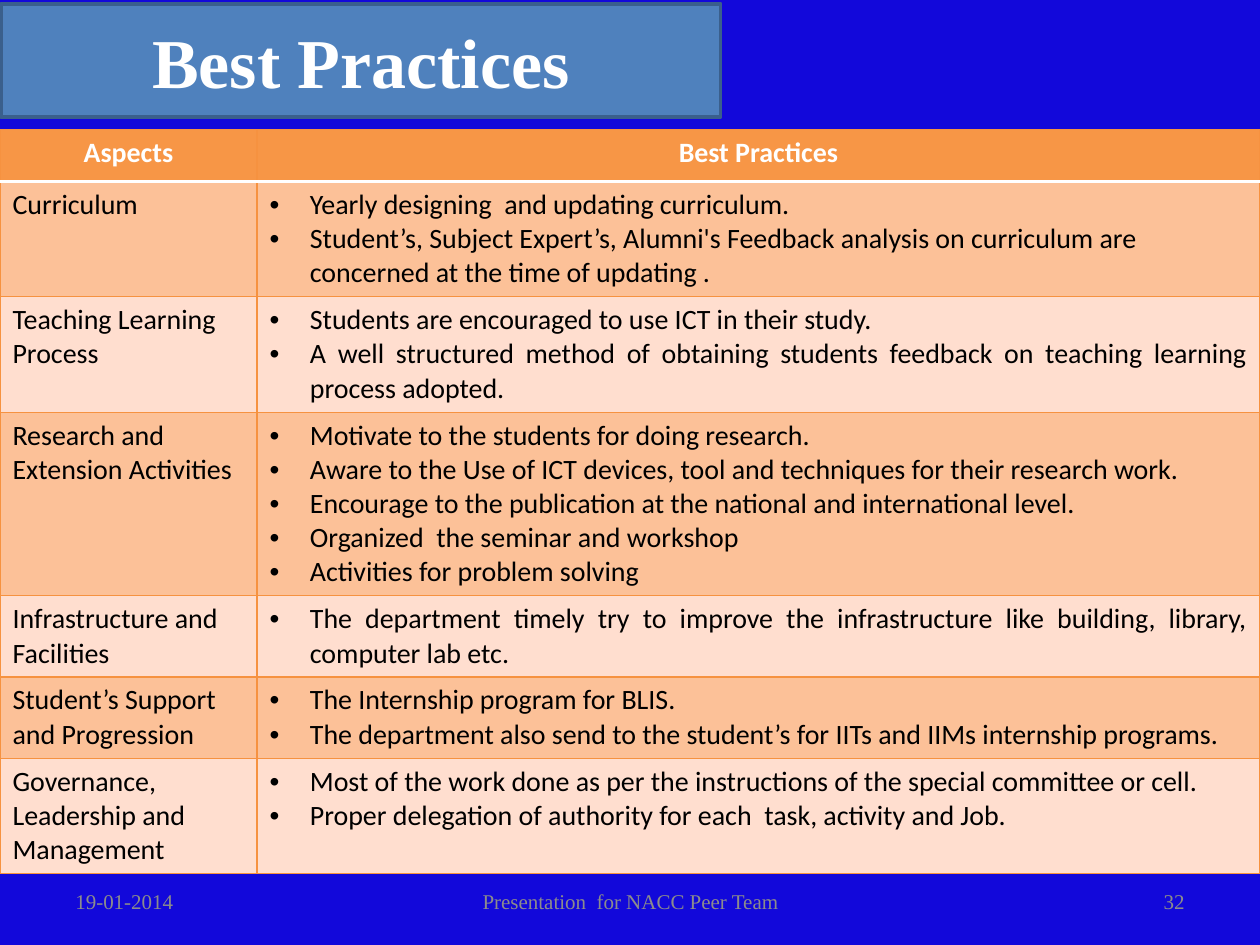
from dataclasses import dataclass

from lxml import etree
from pptx import Presentation
from pptx.dml.color import RGBColor
from pptx.enum.text import MSO_ANCHOR, MSO_AUTO_SIZE, PP_ALIGN
from pptx.oxml.ns import qn
from pptx.util import Inches, Pt

LEFT, CENTER, RIGHT, JUSTIFY = PP_ALIGN.LEFT, PP_ALIGN.CENTER, PP_ALIGN.RIGHT, PP_ALIGN.JUSTIFY
MIDDLE = MSO_ANCHOR.MIDDLE
NO_AUTOFIT = MSO_AUTO_SIZE.NONE

WIDTH, HEIGHT = 10, 7.5
SERIF, SANS = "Times New Roman", "Calibri"
COLORS = {
    "background": "1208DA",
    "title": "4F81BD",
    "title_line": "3A5F8C",
    "header": "F79646",
    "band_dark": "FCC198",
    "band_light": "FFDECF",
    "border": "F69240",
    "white": "FFFFFF",
    "black": "000000",
    "footer": "8C8C8C",
}

# Table grid
TABLE_TOP = 1.03
COLUMN_SHARES = (0.204, 0.796)
LINE_HEIGHT, CELL_PADDING = 0.27, 0.1
HEADER_HEIGHT = 0.41
BULLET_INDENT = 0.32


@dataclass
class Aspect:
    name: str
    practices: list[str]
    lines: int
    left_aligned: int = 0  # leading practices that are not justified


@dataclass
class FooterItem:
    text: str
    left: float  # shares of the slide width
    width: float
    align: PP_ALIGN


ASPECTS = [
    Aspect("Curriculum", [
        "Yearly designing  and updating curriculum.",
        "Student’s, Subject Expert’s, Alumni's Feedback analysis on curriculum are "
        "concerned at the time of updating .",
    ], lines=3, left_aligned=2),
    Aspect("Teaching Learning Process", [
        "Students are encouraged to use ICT in their study.",
        "A well structured method of obtaining students feedback on teaching learning "
        "process adopted.",
    ], lines=3, left_aligned=1),
    Aspect("Research and Extension Activities", [
        "Motivate to the students for doing research.",
        "Aware to the Use of ICT devices, tool and techniques for their research work.",
        "Encourage to the publication at the national and international level.",
        "Organized  the seminar and workshop",
        "Activities for problem solving",
    ], lines=5),
    Aspect("Infrastructure and Facilities", [
        "The department timely try to improve the infrastructure like building, library, "
        "computer lab etc.",
    ], lines=2),
    Aspect("Student’s Support and Progression", [
        "The Internship program for BLIS.",
        "The department also send to the student’s for IITs and IIMs internship programs.",
    ], lines=2),
    Aspect("Governance, Leadership and Management", [
        "Most of the work done as per the instructions of the special committee or cell.",
        "Proper delegation of authority for each  task, activity and Job.",
    ], lines=3),
]

FOOTER = [
    FooterItem("19-01-2014", 0.05, 0.233, LEFT),
    FooterItem("Presentation  for NACC Peer Team", 0.342, 0.317, CENTER),
    FooterItem("32", 0.717, 0.233, RIGHT),
]


def rgb(name: str) -> RGBColor:
    return RGBColor.from_string(COLORS[name])


def write(paragraph, text: str, *, size: float = 16, font: str = SANS, color: str = "black",
          bold: bool = False, align: PP_ALIGN = LEFT, bullet: bool = False) -> None:
    if bullet:
        properties = paragraph._p.get_or_add_pPr()
        properties.set("marL", str(Inches(BULLET_INDENT)))
        properties.set("indent", str(-Inches(BULLET_INDENT)))
        etree.SubElement(properties, qn("a:buFont")).set("typeface", "Arial")
        etree.SubElement(properties, qn("a:buChar")).set("char", "•")
    paragraph.alignment = align
    run = paragraph.add_run()
    run.text = text
    run.font.size = Pt(size)
    run.font.name = font
    run.font.bold = bold
    run.font.color.rgb = rgb(color)


def style_cell(cell, fill: str, top: tuple, bottom: tuple) -> None:
    side = ("border", 0.75)
    properties = cell._tc.get_or_add_tcPr()
    for tag, (color, width) in zip(("lnL", "lnR", "lnT", "lnB"), (side, side, top, bottom)):
        line = etree.SubElement(properties, qn(f"a:{tag}"), w=str(Pt(width)))
        solid = etree.SubElement(line, qn("a:solidFill"))
        etree.SubElement(solid, qn("a:srgbClr"), val=COLORS[color])
    cell.fill.solid()
    cell.fill.fore_color.rgb = rgb(fill)


def add_footer(slide, item: FooterItem) -> None:
    box = slide.shapes.add_textbox(Inches(item.left * WIDTH), Inches(6.95),
                                   Inches(item.width * WIDTH), Inches(0.4))
    frame = box.text_frame
    frame.word_wrap = True
    frame.vertical_anchor = MIDDLE
    write(frame.paragraphs[0], item.text, size=12, font=SERIF, color="footer", align=item.align)


def add_practices_table(slide) -> None:
    heights = [HEADER_HEIGHT] + [a.lines * LINE_HEIGHT + CELL_PADDING for a in ASPECTS]
    table = slide.shapes.add_table(len(heights), len(COLUMN_SHARES), 0, Inches(TABLE_TOP),
                                   Inches(WIDTH), Inches(sum(heights))).table
    for column, share in zip(table.columns, COLUMN_SHARES):
        column.width = Inches(share * WIDTH)
    for row, height in zip(table.rows, heights):
        row.height = Inches(height)

    # Fills and borders
    thin, thick = ("border", 0.75), ("white", 2)
    for index, row in enumerate(table.rows):
        fill = "header" if index == 0 else "band_dark" if index % 2 else "band_light"
        for cell in row.cells:
            style_cell(cell, fill, top=thick if index == 1 else thin,
                       bottom=thick if index == 0 else thin)

    # Header and body text
    for column, heading in enumerate(("Aspects", "Best Practices")):
        write(table.cell(0, column).text_frame.paragraphs[0], heading,
              color="white", bold=True, align=CENTER)
    for row, aspect in enumerate(ASPECTS, start=1):
        write(table.cell(row, 0).text_frame.paragraphs[0], aspect.name)
        frame = table.cell(row, 1).text_frame
        for index, practice in enumerate(aspect.practices):
            paragraph = frame.add_paragraph() if index else frame.paragraphs[0]
            write(paragraph, practice, bullet=True,
                  align=LEFT if index < aspect.left_aligned else JUSTIFY)


def format_title(title) -> None:
    title.left, title.top = Inches(0.01), Inches(0.03)
    title.width, title.height = Inches(5.71), Inches(0.9)
    title.fill.solid()
    title.fill.fore_color.rgb = rgb("title")
    title.line.color.rgb = rgb("title_line")
    title.line.width = Pt(2)
    frame = title.text_frame
    frame.auto_size = NO_AUTOFIT
    frame.vertical_anchor = MIDDLE
    write(frame.paragraphs[0], "Best Practices", size=40, font=SERIF, color="white",
          bold=True, align=CENTER)


def main() -> None:
    presentation = Presentation()
    presentation.slide_width, presentation.slide_height = Inches(WIDTH), Inches(HEIGHT)
    slide = presentation.slides.add_slide(presentation.slide_layouts.get_by_name("Title Only"))
    slide.background.fill.solid()
    slide.background.fill.fore_color.rgb = rgb("background")

    format_title(slide.shapes.title)
    add_practices_table(slide)
    for item in FOOTER:
        add_footer(slide, item)
    presentation.save("out.pptx")


if __name__ == "__main__":
    main()
